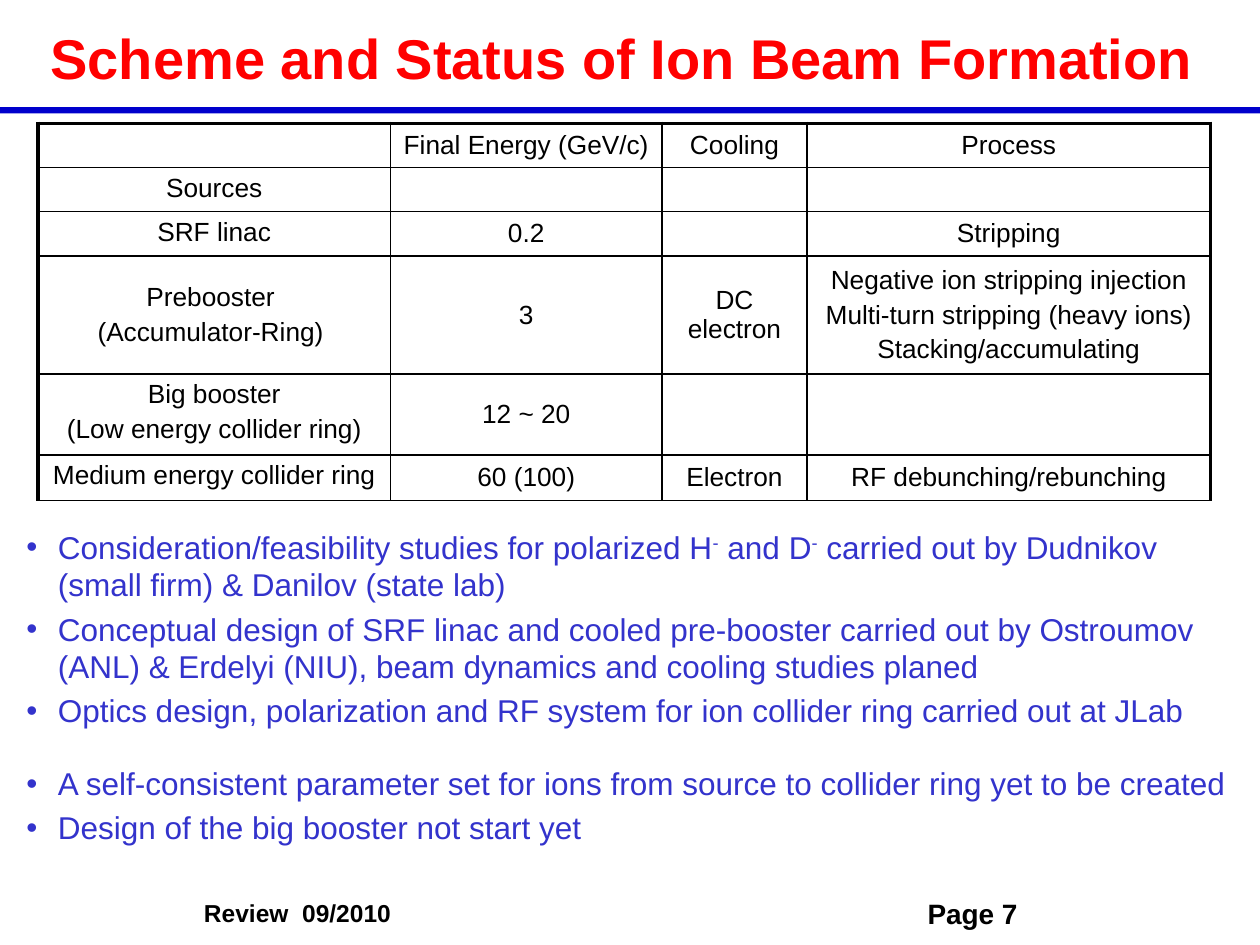
from dataclasses import dataclass

from lxml.etree import SubElement
from pptx import Presentation
from pptx.dml.color import RGBColor as RGB
from pptx.enum.shapes import MSO_SHAPE as SHAPE
from pptx.enum.text import MSO_ANCHOR as ANCHOR, PP_ALIGN as ALIGN
from pptx.oxml.ns import qn
from pptx.util import Pt


@dataclass(frozen=True)
class Theme:
    """Colours, type sizes and font of the slide."""
    font: str = "Arial"
    title: RGB = RGB(0xFF, 0x00, 0x00)
    rule: RGB = RGB(0x00, 0x00, 0xCC)
    body: RGB = RGB(0x33, 0x33, 0xCC)
    ink: RGB = RGB(0x00, 0x00, 0x00)
    title_size: float = 32
    body_size: float = 18
    cell_size: float = 15
    page_size: float = 16
    footer_size: float = 14
    thin: float = 1
    thick: float = 2.25


THEME = Theme()
COLUMNS = (201.6, 155, 83, 230.5)
ROWS = (24, 24, 24.5, 67.5, 46, 26)
CELLS = (
    ("", "Final Energy (GeV/c) ", "Cooling", "Process"),
    ("Sources", "", "", ""),
    ("SRF linac", "0.2", "", "Stripping"),
    ("Prebooster \n(Accumulator-Ring) ", "3", "DC electron",
     "Negative ion stripping injection\nMulti-turn stripping (heavy ions)\n"
     "Stacking/accumulating"),
    ("Big booster\n(Low energy collider ring)", "12 ~ 20", "", ""),
    ("Medium energy collider ring", "60 (100)", "Electron",
     "RF debunching/rebunching"),
)
TOP_ANCHORED = {(1, 0), (2, 0), (4, 0), (5, 0)}
BULLETS = (
    (("Consideration/feasibility studies for polarized H", "-", " and D", "-",
      " carried out by Dudnikov (small firm) & Danilov (state lab)"), 0),
    (("Conceptual design of SRF linac and cooled pre-booster carried out by "
      "Ostroumov (ANL) & Erdelyi (NIU), beam dynamics and cooling studies "
      "planed",), 3.6),
    (("Optics design, polarization and RF system for ion collider ring "
      "carried out at JLab",), 3.6),
    (("A self-consistent parameter set for ions from source to collider ring "
      "yet to be created",), 20),
    (("Design of the big booster not start yet",), 3.6),
)


def assign(target, values):
    """Set attributes of target from a dict."""
    for name, value in values.items():
        setattr(target, name, value)


def add_run(p, text, size, color, bold=False):
    """Append a formatted run to a paragraph."""
    r = p.add_run()
    r.text = text
    assign(r.font, {"name": THEME.font, "size": Pt(size), "bold": bold})
    r.font.color.rgb = color
    return r


def add_title(s, box, text):
    """Place and format the title placeholder."""
    sp = s.shapes.title
    assign(sp, dict(zip(("left", "top", "width", "height"), map(Pt, box))))
    tf = sp.text_frame
    assign(tf, {"word_wrap": True, "vertical_anchor": ANCHOR.MIDDLE})
    p = tf.paragraphs[0]
    p.alignment = ALIGN.CENTER
    add_run(p, text, THEME.title_size, THEME.title, True)


def add_rule(s, box):
    """Draw the bar under the title."""
    sp = s.shapes.add_shape(SHAPE.RECTANGLE, *map(Pt, box))
    sp.shadow.inherit = False
    sp.fill.solid()
    sp.fill.fore_color.rgb = THEME.rule
    sp.line.fill.background()


def add_footer(s, box, text, size, align):
    """Add one bold footer label."""
    tf = s.shapes.add_textbox(*map(Pt, box)).text_frame
    tf.word_wrap = True
    p = tf.paragraphs[0]
    p.alignment = align
    add_run(p, text, size, THEME.ink, True)


def set_borders(cell, widths):
    """Draw the four cell borders ahead of the cell fill."""
    pr = cell._tc.get_or_add_tcPr()
    for side, width in widths.items():
        ln = SubElement(pr, qn(f"a:ln{side}"), w=str(Pt(width)))
        fill = SubElement(ln, qn("a:solidFill"))
        SubElement(fill, qn("a:srgbClr"), val=str(THEME.ink))
    cell.fill.background()


def fill_cell(cell, text, anchor):
    """Write the centred lines of one cell."""
    cell.vertical_anchor = anchor
    tf = cell.text_frame
    for i, line in enumerate(text.split("\n")):
        p = tf.add_paragraph() if i else tf.paragraphs[0]
        assign(p, {"alignment": ALIGN.CENTER, "space_before": Pt(3 if i else 0)})
        if line:
            add_run(p, line, THEME.cell_size, THEME.ink)
        else:
            SubElement(p._p, qn("a:endParaRPr"), sz=str(int(THEME.cell_size * 100)))


def add_stage_table(s, left, top):
    """Add the table of ion beam formation stages."""
    tb = s.shapes.add_table(len(ROWS), len(COLUMNS), Pt(left), Pt(top),
                            Pt(sum(COLUMNS)), Pt(sum(ROWS))).table
    assign(tb, {"first_row": False, "horz_banding": False})
    for column, width in zip(tb.columns, COLUMNS):
        column.width = Pt(width)
    for row, height in zip(tb.rows, ROWS):
        row.height = Pt(height)
    for i, texts in enumerate(CELLS):
        for j, text in enumerate(texts):
            cell = tb.cell(i, j)
            anchor = ANCHOR.TOP if (i, j) in TOP_ANCHORED else ANCHOR.MIDDLE
            fill_cell(cell, text, anchor)
            outer = {"L": j == 0, "R": j == len(COLUMNS) - 1, "T": i == 0, "B": False}
            set_borders(cell, {side: THEME.thick if edge else THEME.thin
                               for side, edge in outer.items()})


def add_bullets(s, box):
    """Add the bulleted status list, with superscript charges."""
    tf = s.shapes.add_textbox(*map(Pt, box)).text_frame
    tf.word_wrap = True
    for i, (parts, gap) in enumerate(BULLETS):
        p = tf.add_paragraph() if i else tf.paragraphs[0]
        p.space_before = Pt(gap)
        pr = p._p.get_or_add_pPr()
        pr.set("marL", str(Pt(18)))
        pr.set("indent", str(-Pt(18)))
        SubElement(pr, qn("a:buFont"), typeface=THEME.font)
        SubElement(pr, qn("a:buChar"), char="•")
        for text in parts:
            r = add_run(p, text, THEME.body_size, THEME.body)
            if text == "-":
                r.font._rPr.set("baseline", "30000")


def main():
    """Build and save the slide."""
    prs = Presentation()
    assign(prs, {"slide_width": Pt(720), "slide_height": Pt(540)})
    s = prs.slides.add_slide(prs.slide_layouts[5])
    add_rule(s, (0, 61.2, 720, 3.6))
    add_footer(s, (506, 509, 99.5, 26.6), "Page 7", THEME.page_size, ALIGN.CENTER)
    add_footer(s, (109.5, 509.8, 127.5, 24.5), "Review  09/2010",
               THEME.footer_size, ALIGN.LEFT)
    add_title(s, (0, 5.8, 720, 54), "Scheme and Status of Ion Beam Formation ")
    add_bullets(s, (8, 298, 709, 200))
    add_stage_table(s, 21.6, 70.5)
    prs.save("out.pptx")


if __name__ == "__main__":
    main()
